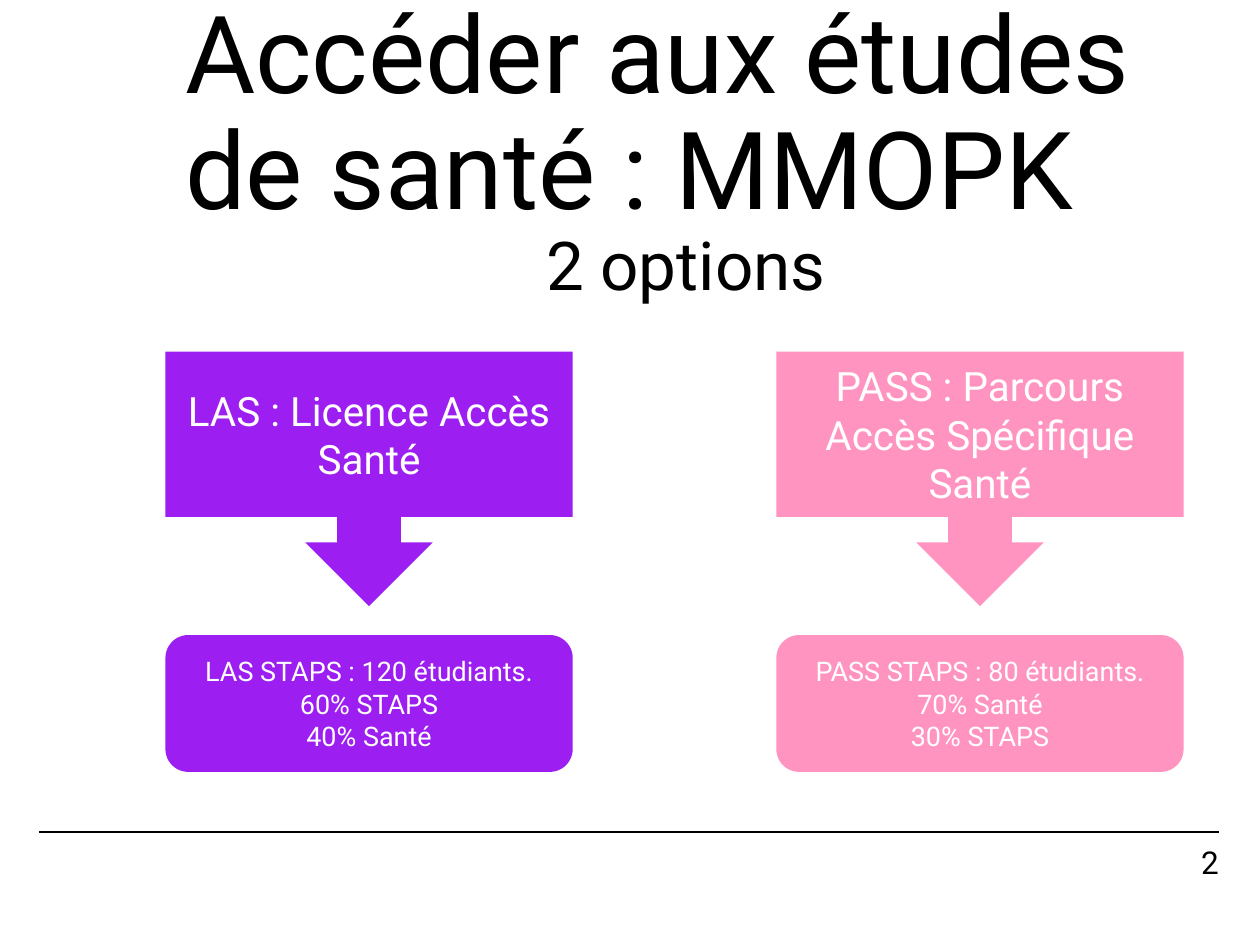
from dataclasses import dataclass

from lxml import etree
from pptx import Presentation
from pptx import util as u
from pptx.dml import color
from pptx.enum import shapes, text
from pptx.oxml import ns

FONT = "Roboto"
COLORS = {
    "ink": "000000",
    "paper": "FFFFFF",
    "las": "9C1EF1",
    "pass": "FF94C1",
}
OPTION_WIDTH = 12.8


@dataclass(frozen=True)
class Line:
    words: str
    size: int
    align: text.PP_ALIGN = text.PP_ALIGN.CENTER
    spacing: float = 1.0


@dataclass(frozen=True)
class Option:
    left: float
    fill: str
    name: str
    figures: tuple[str, ...]


OPTIONS = (
    Option(5.2, "las", "LAS : Licence Accès Santé",
           ("LAS STAPS : 120 étudiants.", "60% STAPS", "40% Santé")),
    Option(24.4, "pass", "PASS : Parcours Accès Spécifique Santé",
           ("PASS STAPS : 80 étudiants.", "70% Santé", "30% STAPS")),
)


def rgb(name: str) -> color.RGBColor:
    return color.RGBColor.from_string(COLORS[name])


def write(frame, lines: list[Line], ink: str) -> None:
    frame.word_wrap = True
    for index, line in enumerate(lines):
        paragraph = frame.paragraphs[0] if index == 0 else frame.add_paragraph()
        paragraph.alignment = line.align
        paragraph.line_spacing = line.spacing
        run = paragraph.add_run()
        run.text = line.words
        run.font.name = FONT
        run.font.size = u.Pt(line.size)
        run.font.color.rgb = rgb(ink)


def add_text(slide, left: float, top: float, width: float, height: float,
             lines: list[Line], anchor: text.MSO_ANCHOR) -> None:
    box = slide.shapes.add_textbox(u.Cm(left), u.Cm(top), u.Cm(width), u.Cm(height))
    frame = box.text_frame
    frame.margin_left = frame.margin_right = u.Cm(0)
    frame.margin_top = frame.margin_bottom = u.Cm(0)
    frame.vertical_anchor = anchor
    write(frame, lines, "ink")


def add_panel(slide, kind: shapes.MSO_SHAPE, option: Option, top: float,
              height: float, lines: list[Line]) -> None:
    panel = slide.shapes.add_shape(
        kind, u.Cm(option.left), u.Cm(top), u.Cm(OPTION_WIDTH), u.Cm(height))
    panel.shadow.inherit = False
    panel.fill.solid()
    panel.fill.fore_color.rgb = rgb(option.fill)
    panel.line.fill.background()
    panel.text_frame.vertical_anchor = text.MSO_ANCHOR.MIDDLE
    write(panel.text_frame, lines, "paper")


def add_option(slide, option: Option) -> None:
    add_panel(slide, shapes.MSO_SHAPE.DOWN_ARROW_CALLOUT, option, 11.05, 8,
              [Line(option.name, 36)])
    add_panel(slide, shapes.MSO_SHAPE.ROUNDED_RECTANGLE, option, 19.96, 4.3,
              [Line(figure, 24) for figure in option.figures])


def add_footer_rule(slide) -> None:
    rule = slide.shapes.add_connector(
        shapes.MSO_CONNECTOR.STRAIGHT,
        u.Cm(1.22), u.Cm(26.16), u.Cm(38.3), u.Cm(26.16))
    rule.line.color.rgb = rgb("ink")
    rule.line.width = u.Pt(2)
    etree.SubElement(rule._element.spPr, ns.qn("a:effectLst"))


def main() -> None:
    deck = Presentation()
    deck.slide_width = u.Cm(39.6)
    deck.slide_height = u.Cm(29.7)
    slide = deck.slides.add_slide(deck.slide_layouts[6])
    slide.background.fill.solid()
    slide.background.fill.fore_color.rgb = rgb("paper")

    add_footer_rule(slide)
    add_text(slide, 5.82, 0, 31.47, 9.7, [
        Line("Accéder aux études de santé : MMOPK", 96, text.PP_ALIGN.LEFT, 0.9),
        Line("2 options", 60, spacing=0.9),
    ], text.MSO_ANCHOR.TOP)
    add_text(slide, 32.5, 26.5, 5.8, 1.2,
             [Line("2", 28, text.PP_ALIGN.RIGHT)], text.MSO_ANCHOR.MIDDLE)
    for option in OPTIONS:
        add_option(slide, option)

    deck.save("out.pptx")


if __name__ == "__main__":
    main()
